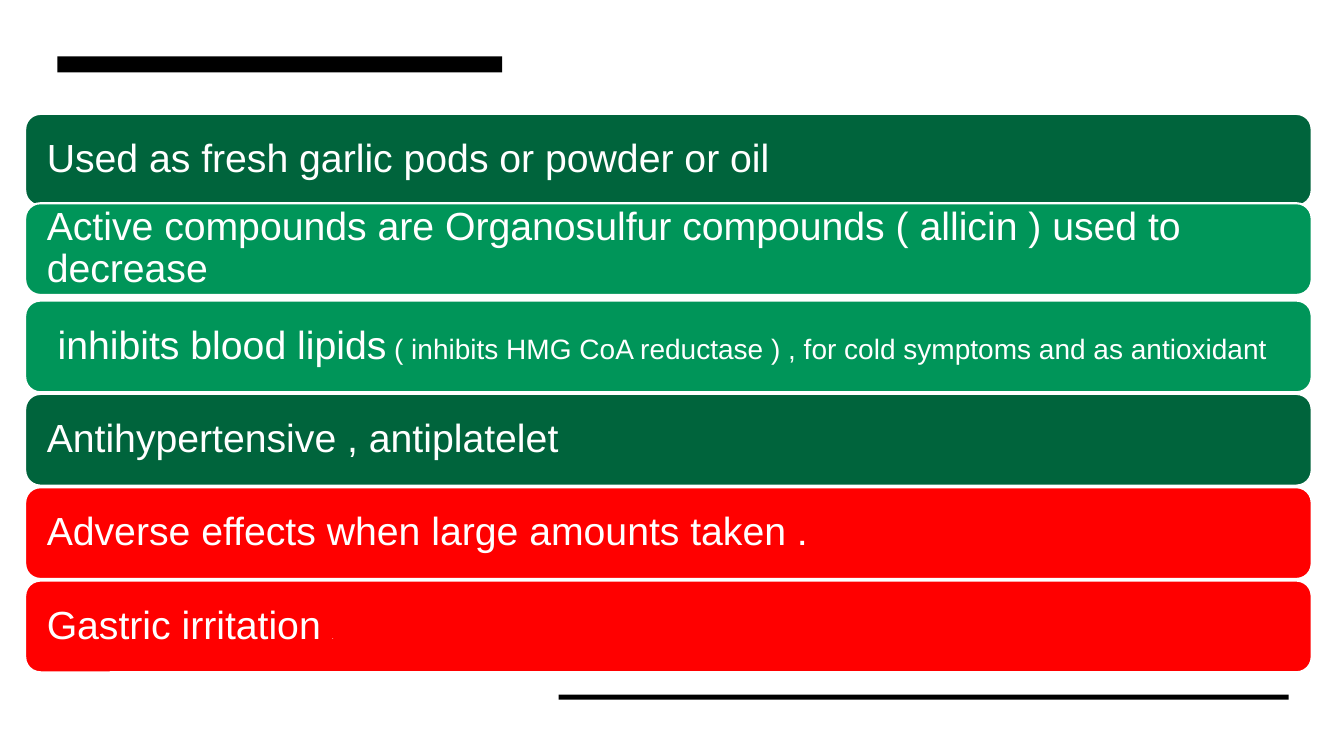
from dataclasses import dataclass

import pptx
import pptx.dml.color
import pptx.enum.shapes
import pptx.enum.text
import pptx.shapes.autoshape
import pptx.util

Inches = pptx.util.Inches
Preset = pptx.enum.shapes.MSO_SHAPE


@dataclass(frozen=True)
class Theme:
    white: str = "FFFFFF"
    black: str = "000000"
    dark_green: str = "00643C"
    green: str = "009559"
    red: str = "FF0000"
    font: str = "Arial"
    large: int = 28
    small: int = 20
    tiny: int = 5
    outline: float = 1.5


@dataclass(frozen=True)
class Block:
    left: float
    top: float
    width: float
    height: float
    color: str


@dataclass(frozen=True)
class Fact:
    color: str
    runs: tuple[tuple[str, int], ...]
    shift: float = 0


THEME = Theme()
SLIDE_WIDTH, SLIDE_HEIGHT = 13.33, 7.5

# Backdrop and the two accent bars
BLOCKS = [
    Block(0, 0, SLIDE_WIDTH, SLIDE_HEIGHT, THEME.white),
    Block(0.57, 0.56, 4.41, 0.16, THEME.black),
    Block(5.54, 6.89, 7.24, 0.05, THEME.black),
]

# Facts about garlic, from top to bottom
FACTS = [
    Fact(THEME.dark_green, (("Used as fresh garlic pods or powder or oil", THEME.large),)),
    Fact(THEME.green, (("Active compounds are Organosulfur compounds ( allicin ) used to decrease",
                        THEME.large),), shift=-0.04),
    Fact(THEME.green, ((" inhibits blood lipids", THEME.large),
                       (" ( inhibits HMG CoA reductase ) , for cold symptoms and as antioxidant",
                        THEME.small))),
    Fact(THEME.dark_green, (("Antihypertensive , antiplatelet", THEME.large),)),
    Fact(THEME.red, (("Adverse effects when large amounts taken .", THEME.large),)),
    Fact(THEME.red, (("Gastric irritation ", THEME.large), (".", THEME.tiny))),
]
FIRST_TOP, LAST_TOP = 1.13, 5.76
PITCH = (LAST_TOP - FIRST_TOP) / (len(FACTS) - 1)


def rgb(color: str) -> pptx.dml.color.RGBColor:
    return pptx.dml.color.RGBColor.from_string(color)


def draw_block(shapes, block: Block, preset: Preset) -> pptx.shapes.autoshape.Shape:
    shape = shapes.add_shape(preset, Inches(block.left), Inches(block.top),
                             Inches(block.width), Inches(block.height))
    shape.shadow.inherit = False
    shape.fill.solid()
    shape.fill.fore_color.rgb = rgb(block.color)
    shape.line.fill.background()
    return shape


def draw_fact(shapes, fact: Fact, row: int) -> None:
    top = FIRST_TOP + row * PITCH + fact.shift
    shape = draw_block(shapes, Block(0.25, top, 12.76, 0.91, fact.color),
                       Preset.ROUNDED_RECTANGLE)
    shape.line.color.rgb = rgb(THEME.white)
    shape.line.width = pptx.util.Pt(THEME.outline)

    frame_format = {
        "word_wrap": True,
        "vertical_anchor": pptx.enum.text.MSO_ANCHOR.MIDDLE,
        "margin_left": Inches(0.17),
        "margin_right": Inches(0.17),
        "margin_top": Inches(0.05),
        "margin_bottom": Inches(0.05),
    }
    for name, value in frame_format.items():
        setattr(shape.text_frame, name, value)

    paragraph = shape.text_frame.paragraphs[0]
    paragraph.alignment = pptx.enum.text.PP_ALIGN.LEFT
    paragraph.line_spacing = 0.9
    for text, size in fact.runs:
        run = paragraph.add_run()
        run.text = text
        font_format = {"name": THEME.font, "size": pptx.util.Pt(size)}
        for name, value in font_format.items():
            setattr(run.font, name, value)
        run.font.color.rgb = rgb(THEME.white)


def main() -> None:
    presentation = pptx.Presentation()
    presentation.slide_width = Inches(SLIDE_WIDTH)
    presentation.slide_height = Inches(SLIDE_HEIGHT)
    slide = presentation.slides.add_slide(presentation.slide_layouts[6])

    for block in BLOCKS:
        draw_block(slide.shapes, block, Preset.RECTANGLE)

    fact_group = slide.shapes.add_group_shape()
    for row, fact in enumerate(FACTS):
        draw_fact(fact_group.shapes, fact, row)

    presentation.save("out.pptx")


if __name__ == "__main__":
    main()
